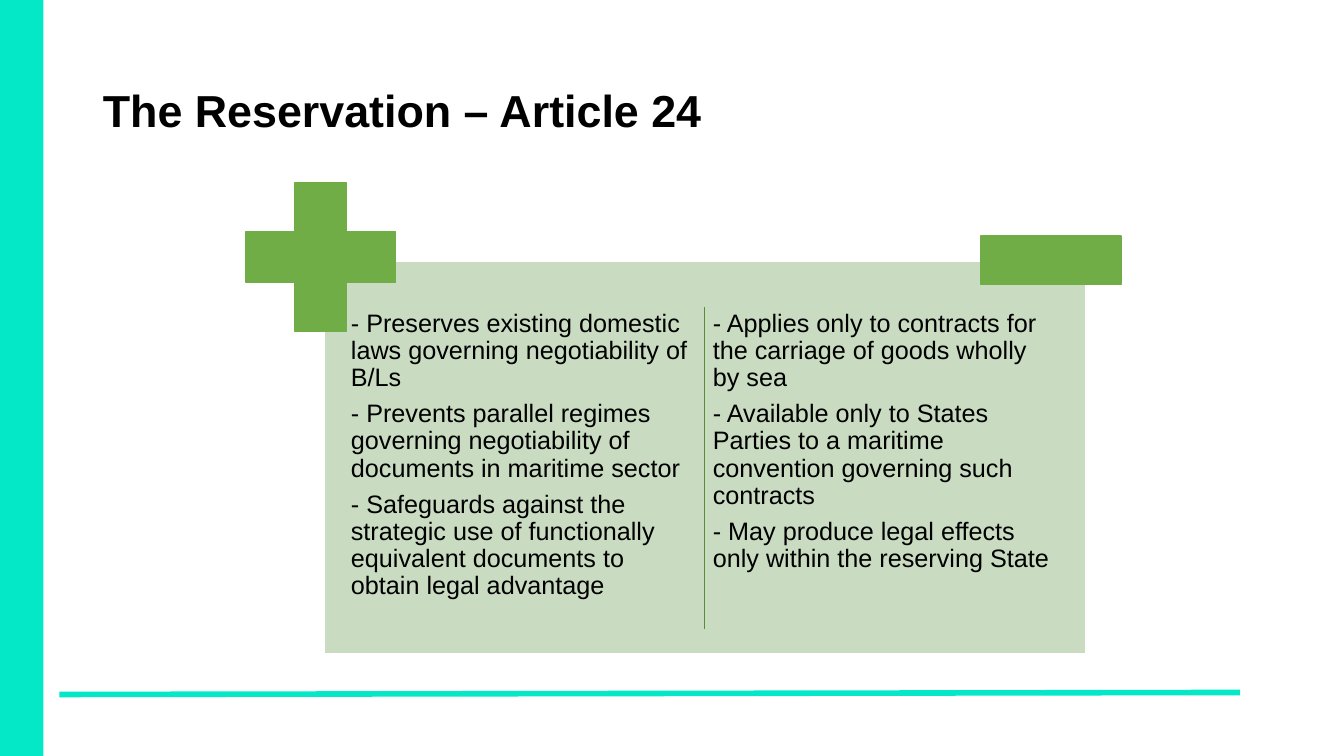
from lxml.etree import SubElement
from pptx import Presentation
from pptx.dml.color import RGBColor
from pptx.enum.shapes import MSO_CONNECTOR, MSO_SHAPE
from pptx.enum.text import MSO_ANCHOR, MSO_AUTO_SIZE, PP_ALIGN
from pptx.oxml.ns import qn
from pptx.util import Inches, Pt

COLORS = {name: RGBColor.from_string(value) for name, value in {
    "accent": "04E8C7", "panel": "C9DBC1", "sign": "70AD47",
    "divider": "5A8B39", "white": "FFFFFF", "text": "000000"}.items()}

presentation = Presentation()
presentation.slide_width = Inches(13.33)
presentation.slide_height = Inches(7.5)
slide = presentation.slides.add_slide(presentation.slide_layouts[3])
title, *columns = slide.placeholders


def place(shape, *box):
    for side, length in zip(("left", "top", "width", "height"), box):
        setattr(shape, side, Inches(length))


def format_text(shape, paragraphs, margin, anchor, paragraph_format, font_format):
    frame = shape.text_frame
    frame.text = "\n".join(paragraphs)
    frame_format = {"word_wrap": True, "auto_size": MSO_AUTO_SIZE.NONE, "vertical_anchor": anchor}
    frame_format.update({f"margin_{side}": Inches(margin)
                         for side in ("left", "top", "right", "bottom")})
    for name, value in frame_format.items():
        setattr(frame, name, value)
    for paragraph in frame.paragraphs:
        properties = paragraph._p.get_or_add_pPr()
        properties.set("marL", "0")
        properties.set("indent", "0")
        SubElement(properties, qn("a:buNone"))
        for name, value in paragraph_format.items():
            setattr(paragraph, name, value)
        for run in paragraph.runs:
            run.font.color.rgb = COLORS["text"]
            for name, value in font_format.items():
                setattr(run.font, name, value)


# Side band, panel, plus and minus signs
blocks = [
    (MSO_SHAPE.RECTANGLE, (0, 0, 0.43, 7.5), "accent", None),
    (MSO_SHAPE.RECTANGLE, (3.22, 2.59, 7.55, 3.9), "panel", "white"),
    (MSO_SHAPE.CROSS, (2.44, 1.81, 1.48, 1.48), "sign", "sign"),
    (MSO_SHAPE.RECTANGLE, (9.73, 2.34, 1.39, 0.48), "sign", "sign"),
]
for kind, box, fill, outline in blocks:
    shape = slide.shapes.add_shape(kind, *map(Inches, box))
    shape.shadow.inherit = False
    shape.fill.solid()
    shape.fill.fore_color.rgb = COLORS[fill]
    if outline:
        shape.line.color.rgb = COLORS[outline]
        shape.line.width = Pt(1)
    else:
        shape.line.fill.background()
    if kind == MSO_SHAPE.CROSS:
        shape.adjustments[0] = 0.328
    if fill != "sign":  # band and panel lie behind the text
        title.element.addprevious(shape.element)

# Footer rule and column divider
rules = [((12.3, 6.87, 0.59, 6.89), "accent", 4),
         ((6.99, 3.05, 6.99, 6.24), "divider", 1)]
for ends, color, width in rules:
    rule = slide.shapes.add_connector(MSO_CONNECTOR.STRAIGHT, *map(Inches, ends))
    rule.line.color.rgb = COLORS[color]
    rule.line.width = Pt(width)
    SubElement(rule.element.spPr, qn("a:effectLst"))

# Title
place(title, 0.92, 0.4, 11.5, 1.45)
format_text(title, ["The Reservation – Article 24"], 0.1, MSO_ANCHOR.MIDDLE,
            {"alignment": PP_ALIGN.LEFT, "line_spacing": 0.9},
            {"name": "Arial", "size": Pt(32), "bold": True})

# Advantages and limits
arguments = [
    ["- Preserves existing domestic laws governing negotiability of B/Ls",
     "- Prevents parallel regimes governing negotiability of documents in maritime sector",
     "- Safeguards against the strategic use of functionally equivalent documents "
     "to obtain legal advantage"],
    ["- Applies only to contracts for the carriage of goods wholly by sea",
     "- Available only to States Parties to a maritime convention governing such contracts",
     "- May produce legal effects only within the reserving State"],
]
for index, (column, points) in enumerate(zip(columns, arguments)):
    place(column, 3.44 + 3.59 * index, 3.04, 3.51, 3.34)
    format_text(column, points, 0.04, MSO_ANCHOR.TOP,
                {"alignment": PP_ALIGN.LEFT, "line_spacing": 0.9,
                 "space_before": Pt(0), "space_after": Pt(6.3)},
                {"name": "Arial", "size": Pt(18)})
    if index == len(arguments) - 1:
        break

# Remove the date, footer and number placeholders if the layout gave any
for placeholder in columns[len(arguments):]:
    placeholder.element.getparent().remove(placeholder.element)

presentation.save("out.pptx")
